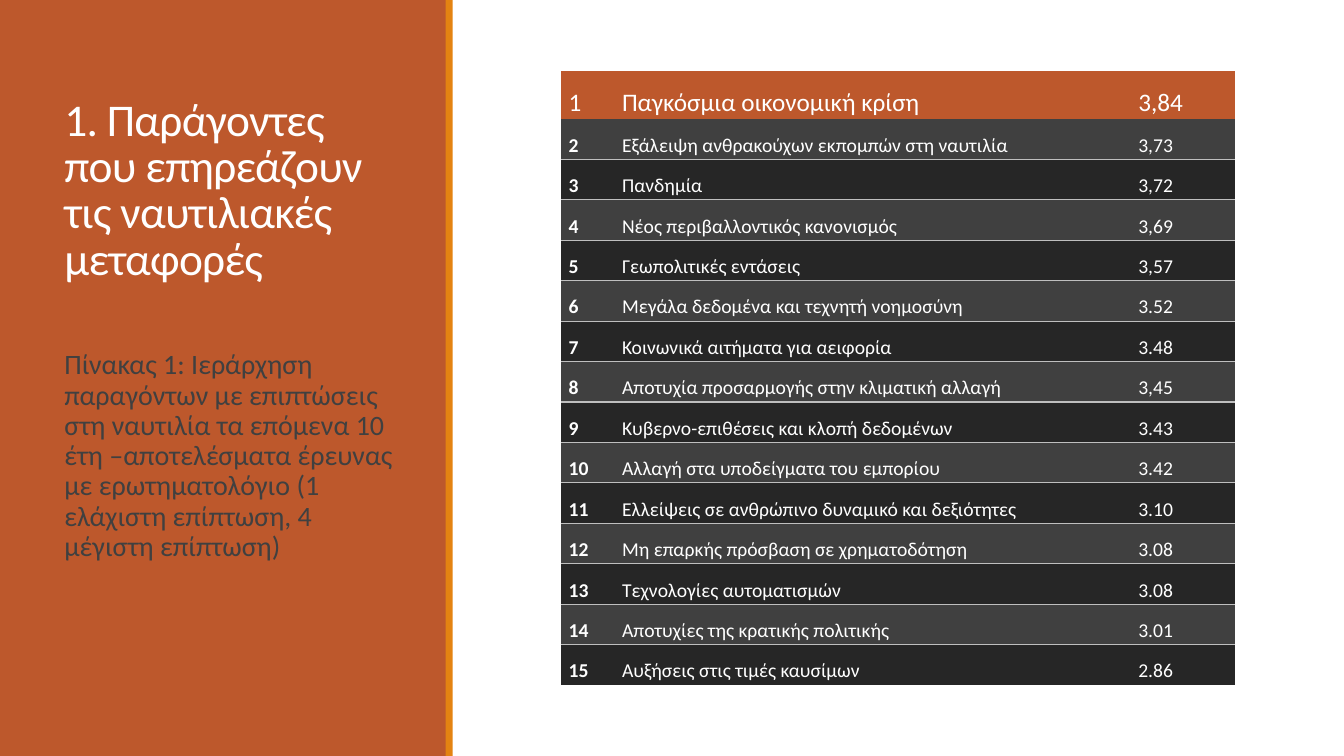
from typing import NamedTuple

from lxml.etree import SubElement
from pptx import Presentation
from pptx.dml.color import RGBColor
from pptx.enum.shapes import MSO_SHAPE as SHAPE
from pptx.enum.text import MSO_ANCHOR as ANCHOR
from pptx.oxml import parse_xml
from pptx.oxml.ns import nsdecls, qn
from pptx.slide import Slide
from pptx.table import _Cell as Cell
from pptx.text.text import _Paragraph as Paragraph
from pptx.util import Inches, Pt

RUST = RGBColor(0xBD, 0x58, 0x2C)
ORANGE = RGBColor(0xE4, 0x83, 0x12)
WHITE = RGBColor(0xFF, 0xFF, 0xFF)
GREY = RGBColor(0x40, 0x40, 0x40)
DARK = RGBColor(0x26, 0x26, 0x26)
RULE = RGBColor(0xBF, 0xBF, 0xBF)
FONT = "Calibri"
NO_STYLE = "{2D5ABB26-0587-4C30-8999-92F81FD0307C}"


class Bar(NamedTuple):
    left: float
    width: float
    color: RGBColor


class Label(NamedTuple):
    text: str
    top: float
    height: float
    size: float
    color: RGBColor
    line_spacing: float
    anchor: ANCHOR
    tracking: int


class Factor(NamedTuple):
    name: str
    score: str


BARS = [Bar(0, 4.43, RUST), Bar(4.42, 0.07, ORANGE)]
LABELS = [
    Label("1. Παράγοντες που επηρεάζουν τις ναυτιλιακές μεταφορές",
          0.57, 2.3, 32.4, WHITE, 0.85, ANCHOR.BOTTOM, -50),
    Label("Πίνακας 1: Ιεράρχηση παραγόντων με επιπτώσεις στη ναυτιλία τα επόμενα 10 έτη "
          "–αποτελέσματα έρευνας με ερωτηματολόγιο (1 ελάχιστη επίπτωση, 4 μέγιστη επίπτωση)",
          3.43, 3.12, 20, GREY, 0.9, ANCHOR.TOP, 0),
]
FACTORS = [
    Factor("Παγκόσμια οικονομική κρίση", "3,84"),
    Factor("Εξάλειψη ανθρακούχων εκπομπών στη ναυτιλία", "3,73"),
    Factor("Πανδημία", "3,72"),
    Factor("Νέος περιβαλλοντικός κανονισμός", "3,69"),
    Factor("Γεωπολιτικές εντάσεις", "3,57"),
    Factor("Μεγάλα δεδομένα και τεχνητή νοημοσύνη", "3.52"),
    Factor("Κοινωνικά αιτήματα για αειφορία", "3.48"),
    Factor("Αποτυχία προσαρμογής στην κλιματική αλλαγή", "3,45"),
    Factor("Κυβερνο-επιθέσεις και κλοπή δεδομένων", "3.43"),
    Factor("Αλλαγή στα υποδείγματα του εμπορίου", "3.42"),
    Factor("Ελλείψεις σε ανθρώπινο δυναμικό και δεξιότητες", "3.10"),
    Factor("Μη επαρκής πρόσβαση σε χρηματοδότηση", "3.08"),
    Factor("Τεχνολογίες αυτοματισμών", "3.08"),
    Factor("Αποτυχίες της κρατικής πολιτικής", "3.01"),
    Factor("Αυξήσεις στις τιμές καυσίμων", "2.86"),
]
COLUMNS = [0.53, 5.12, 1.04]
TABLE_HEIGHT, HEAD_HEIGHT = 6.1, 0.48


def format_text(p: Paragraph, size: float, color: RGBColor, spacing: float,
                bold: bool = False) -> None:
    """Style a paragraph and its runs."""
    p.line_spacing = spacing
    for r in p.runs:
        r.font.name, r.font.size, r.font.bold = FONT, Pt(size), bold
        r.font.color.rgb = color


def add_bar(s: Slide, bar: Bar) -> None:
    """Draw a full-height vertical bar."""
    sp = s.shapes.add_shape(SHAPE.RECTANGLE, Inches(bar.left), 0, Inches(bar.width), Inches(7.5))
    sp.shadow.inherit = False
    sp.fill.solid()
    sp.fill.fore_color.rgb = bar.color
    sp.line.fill.background()


def add_label(s: Slide, label: Label) -> None:
    """Write a text block on the side panel."""
    sp = s.shapes.add_textbox(Inches(0.54), Inches(label.top), Inches(3.37), Inches(label.height))
    tf = sp.text_frame
    tf.word_wrap = True
    tf.vertical_anchor = label.anchor
    tf.margin_right = 0
    tf.text = label.text
    p = tf.paragraphs[0]
    format_text(p, label.size, label.color, label.line_spacing)
    if label.tracking:
        p.runs[0].font._element.set("spc", str(label.tracking))


def add_rule(cell: Cell, side: str) -> None:
    """Draw a thin line on one side of a cell."""
    line = parse_xml(
        f'<a:{side} {nsdecls("a")} w="12700"><a:solidFill><a:srgbClr val="{RULE}"/>'
        f'</a:solidFill></a:{side}>')
    cell._tc.get_or_add_tcPr().insert(0, line)


def fill_cell(cell: Cell, text: str, row: int, col: int) -> None:
    """Write and style one table cell."""
    head, even = row == 0, row % 2 == 1
    cell.margin_left = cell.margin_right = Inches(0.08)
    cell.margin_top, cell.margin_bottom = Inches(0.11), 0
    cell.vertical_anchor = ANCHOR.MIDDLE if head else ANCHOR.TOP
    cell.text_frame.text = text
    format_text(cell.text_frame.paragraphs[0], 18 if head else 14, WHITE, 1.15,
                bold=col == 0 and not head)
    cell.fill.solid()
    cell.fill.fore_color.rgb = RUST if head else GREY if even else DARK
    if not head:
        add_rule(cell, "lnB" if even else "lnT")


def add_ranking(s: Slide, factors: list[Factor]) -> None:
    """Build the table of ranked factors."""
    frame = s.shapes.add_table(len(factors), len(COLUMNS), Inches(5.56), Inches(0.7),
                               Inches(sum(COLUMNS)), Inches(TABLE_HEIGHT))
    table = frame.table
    table.first_row = table.horz_banding = False
    props = table._tbl.tblPr
    style = props.find(qn("a:tableStyleId"))
    if style is None:
        style = SubElement(props, qn("a:tableStyleId"))
    style.text = NO_STYLE
    for column, width in zip(table.columns, COLUMNS):
        column.width = Inches(width)
    row_height = (TABLE_HEIGHT - HEAD_HEIGHT) / (len(factors) - 1)
    for i, factor in enumerate(factors):
        table.rows[i].height = Inches(row_height if i else HEAD_HEIGHT)
        for j, text in enumerate((str(i + 1), factor.name, factor.score)):
            fill_cell(table.cell(i, j), text, i, j)
    last = len(factors) - 1
    for j in range(len(COLUMNS)):
        table.cell(last, j).vertical_anchor = ANCHOR.TOP


def main() -> None:
    """Build and save the slide."""
    prs = Presentation()
    prs.slide_width, prs.slide_height = Inches(13.33), Inches(7.5)
    s = prs.slides.add_slide(prs.slide_layouts[6])
    for bar in BARS:
        add_bar(s, bar)
    for label in LABELS:
        add_label(s, label)
    add_ranking(s, FACTORS)
    prs.save("out.pptx")


if __name__ == "__main__":
    main()
